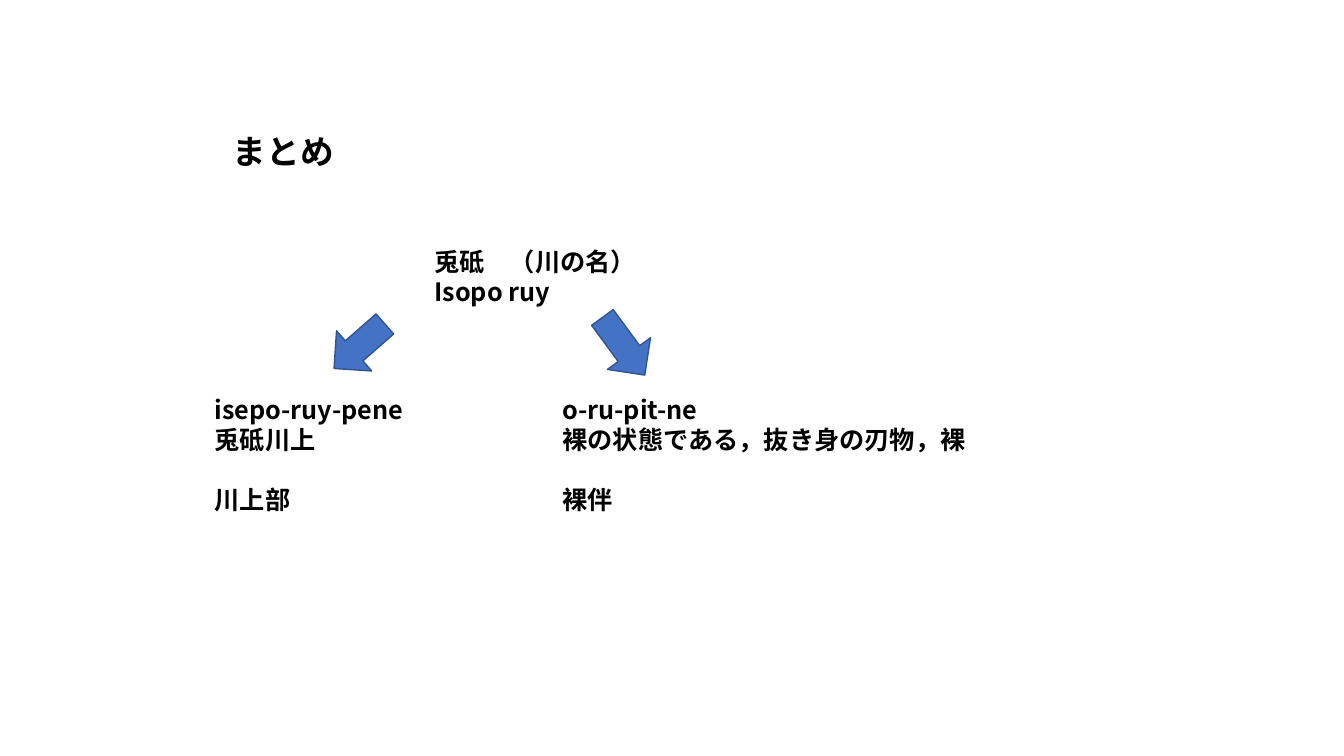
from dataclasses import dataclass

from lxml.etree import SubElement
from pptx import Presentation
from pptx.dml.color import RGBColor
from pptx.enum.shapes import MSO_SHAPE as Preset
from pptx.enum.text import MSO_ANCHOR as Anchor, MSO_AUTO_SIZE as AutoSize, PP_ALIGN as Align
from pptx.oxml.ns import qn
from pptx.slide import Slide
from pptx.text.text import TextFrame
from pptx.util import Emu, Pt

EMU_PER_PX = 9144  # 100 px to the inch


@dataclass(frozen=True)
class Theme:
    font: str = "Noto Sans CJK JP"
    text: RGBColor = RGBColor(0x00, 0x00, 0x00)
    arrow_fill: RGBColor = RGBColor(0x44, 0x72, 0xC4)
    arrow_line: RGBColor = RGBColor(0x32, 0x54, 0x91)
    title_size: int = 24
    body_size: int = 18
    group_gap: float = 21.5


@dataclass(frozen=True)
class Box:
    left: int
    top: int
    width: int
    height: int

    def emu(self) -> tuple[Emu, ...]:
        return tuple(px(n) for n in (self.left, self.top, self.width, self.height))


@dataclass(frozen=True)
class Note:
    box: Box
    groups: tuple[str, ...]  # groups of lines, set apart by a gap


@dataclass(frozen=True)
class Arrow:
    box: Box
    rotation: float


THEME = Theme()
TITLE_BOX = Box(221, 125, 129, 50)
NOTES = (
    Note(Box(421, 239, 254, 71), ("兎砥　（川の名）\nIsopo ruy",)),
    Note(Box(203, 386, 209, 131), ("isepo-ruy-pene\n兎砥川上", "川上部")),
    Note(Box(548, 386, 432, 131),
         ("o-ru-pit-ne\n裸の状態である，抜き身の刃物，裸", "裸伴")),
)
ARROWS = (
    Arrow(Box(330, 310, 53, 67), 48.8),
    Arrow(Box(592, 308, 53, 71), 323.7),
)


def px(length: int) -> Emu:
    return Emu(length * EMU_PER_PX)


def write_text(frame: TextFrame, *groups: str, size: int, bold: bool = True) -> None:
    frame.word_wrap = True
    frame.auto_size = AutoSize.NONE
    frame.vertical_anchor = Anchor.TOP
    lines = [(line, group > 0 and index == 0)
             for group, text in enumerate(groups)
             for index, line in enumerate(text.split("\n"))]
    for number, (line, starts_group) in enumerate(lines):
        paragraph = frame.add_paragraph() if number else frame.paragraphs[0]
        paragraph.alignment = Align.LEFT
        paragraph.line_spacing = 1.0
        paragraph.space_before = Pt(THEME.group_gap if starts_group else 0)
        run = paragraph.add_run()
        run.text = line
        run.font.name = THEME.font
        run.font.size = Pt(size)
        run.font.bold = bold
        run.font.color.rgb = THEME.text
        # East Asian typeface
        SubElement(run.font._element, qn("a:ea")).set("typeface", THEME.font)


def add_title(slide: Slide, text: str) -> None:
    title = slide.shapes.title
    title.left, title.top, title.width, title.height = TITLE_BOX.emu()
    write_text(title.text_frame, text, size=THEME.title_size)


def add_note(slide: Slide, note: Note) -> None:
    shape = slide.shapes.add_textbox(*note.box.emu())
    write_text(shape.text_frame, *note.groups, size=THEME.body_size)


def add_arrow(slide: Slide, arrow: Arrow) -> None:
    shape = slide.shapes.add_shape(Preset.DOWN_ARROW, *arrow.box.emu())
    shape.rotation = arrow.rotation
    shape.shadow.inherit = False
    shape.fill.solid()
    shape.fill.fore_color.rgb = THEME.arrow_fill
    shape.line.color.rgb = THEME.arrow_line
    shape.line.width = Pt(1)


def main() -> None:
    presentation = Presentation()
    presentation.slide_width, presentation.slide_height = px(1333), px(750)
    slide = presentation.slides.add_slide(presentation.slide_layouts.get_by_name("Title Only"))

    # Heading
    add_title(slide, "まとめ")

    # River name and its two readings
    for note in NOTES:
        add_note(slide, note)

    # Arrows from the name to the readings
    for arrow in ARROWS:
        add_arrow(slide, arrow)

    presentation.save("out.pptx")


if __name__ == "__main__":
    main()
